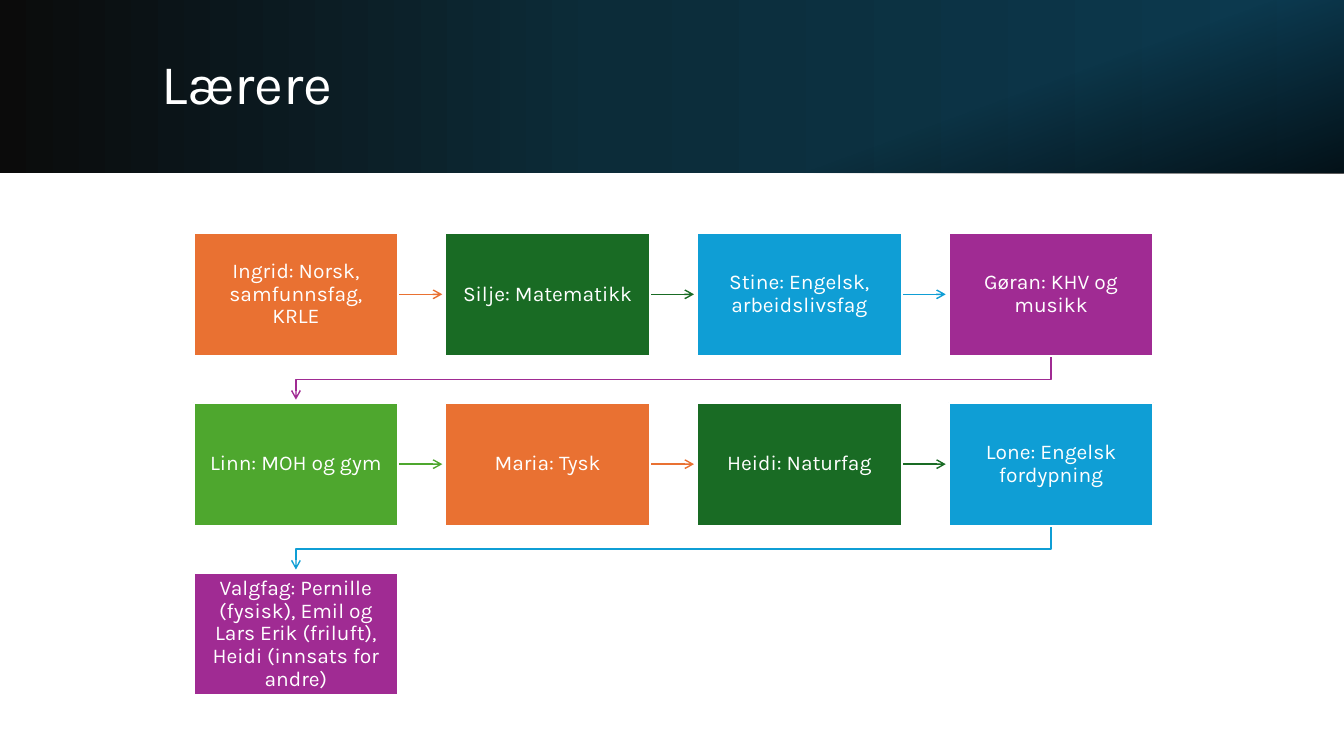
from lxml.etree import SubElement
from pptx import Presentation
from pptx.dml.color import RGBColor
from pptx.enum.shapes import MSO_CONNECTOR, MSO_SHAPE
from pptx.enum.text import MSO_ANCHOR, PP_ALIGN
from pptx.oxml import parse_xml
from pptx.oxml.ns import nsdecls, qn
from pptx.util import Inches, Pt

TITLE = "Lærere"
TEACHERS = [
    "Ingrid: Norsk, samfunnsfag, KRLE",
    "Silje: Matematikk",
    "Stine: Engelsk, arbeidslivsfag",
    "Gøran: KHV og musikk",
    "Linn: MOH og gym",
    "Maria: Tysk",
    "Heidi: Naturfag",
    "Lone: Engelsk fordypning",
    "Valgfag: Pernille (fysisk), Emil og Lars Erik (friluft), Heidi (innsats for andre)",
]
ORANGE = RGBColor(0xE9, 0x71, 0x32)
DARK_GREEN = RGBColor(0x19, 0x6B, 0x24)
BLUE = RGBColor(0x0F, 0x9E, 0xD5)
PURPLE = RGBColor(0xA0, 0x2B, 0x93)
GREEN = RGBColor(0x4E, 0xA7, 0x2E)
WHITE = RGBColor(0xFF, 0xFF, 0xFF)
BLACK = RGBColor(0, 0, 0)
NIGHT = RGBColor(0x0B, 0x0B, 0x0B)
DEEP_TEAL = RGBColor(0x0C, 0x2C, 0x39)
TEAL = RGBColor(0x0C, 0x3A, 0x50)
CYCLE = [ORANGE, DARK_GREEN, BLUE, PURPLE, GREEN]

HEADER_LAYERS = [
    (0, [(0, NIGHT, 100), (45, DEEP_TEAL, 100), (100, TEAL, 100)]),
    (70, [(0, BLACK, 0), (70, BLACK, 0), (100, BLACK, 70)]),
]
FONT = "Karla"
WIDTH, HEIGHT, HEADER = 13.33, 7.5, 1.72
LEFT, TOP, RIGHT, BOTTOM = 1.92, 2.31, 11.44, 6.9
BOX_W, BOX_H = 2.03, 1.22
COLS, ROWS = 4, 3
STEP_X = (RIGHT - LEFT - BOX_W) / (COLS - 1)
STEP_Y = (BOTTOM - TOP - BOX_H) / (ROWS - 1)
GAP = 0.03


def add_header_layer(s, angle, stops):
    sp = s.shapes.add_shape(MSO_SHAPE.RECTANGLE, 0, 0, Inches(WIDTH), Inches(HEADER))
    sp.shadow.inherit = False
    sp.line.fill.background()
    marks = "".join(
        f'<a:gs pos="{pos * 1000}"><a:srgbClr val="{color}">'
        f'<a:alpha val="{alpha * 1000}"/></a:srgbClr></a:gs>'
        for pos, color, alpha in stops
    )
    grad = parse_xml(
        f'<a:gradFill {nsdecls("a")}><a:gsLst>{marks}</a:gsLst>'
        f'<a:lin ang="{angle * 60000}" scaled="0"/></a:gradFill>'
    )
    sp._element.spPr.find(qn("a:prstGeom")).addnext(grad)


def write(sp, text, size, align):
    tf = sp.text_frame
    tf.word_wrap = True
    tf.vertical_anchor = MSO_ANCHOR.MIDDLE
    p = tf.paragraphs[0]
    p.text = text
    p.alignment = align
    p.line_spacing = 0.9
    p.font.name, p.font.size, p.font.color.rgb = FONT, Pt(size), WHITE
    return tf


def add_arrow(s, points, color):
    points = [(Inches(x), Inches(y)) for x, y in points]
    if len(points) == 2:
        sp = s.shapes.add_connector(MSO_CONNECTOR.STRAIGHT, *points[0], *points[1])
        SubElement(sp._element.spPr, qn("a:effectLst"))
    else:
        builder = s.shapes.build_freeform(*points[0])
        builder.add_line_segments(points[1:], close=False)
        sp = builder.convert_to_shape()
        sp.fill.background()
        sp.shadow.inherit = False
    sp.line.color.rgb = color
    sp.line.width = Pt(1)
    SubElement(sp.line._get_or_add_ln(), qn("a:tailEnd"), type="arrow")


def add_box(s, x, y, text, color):
    sp = s.shapes.add_shape(
        MSO_SHAPE.RECTANGLE, Inches(x), Inches(y), Inches(BOX_W), Inches(BOX_H)
    )
    sp.shadow.inherit = False
    sp.fill.solid()
    sp.fill.fore_color.rgb = color
    sp.line.color.rgb = WHITE
    sp.line.width = Pt(1.5)
    tf = write(sp, text, 15, PP_ALIGN.CENTER)
    tf.margin_left = tf.margin_right = tf.margin_top = tf.margin_bottom = Inches(0.1)


def arrow_points(x, y, last_in_row):
    if not last_in_row:
        middle = y + BOX_H / 2
        return [(x + BOX_W, middle), (x + STEP_X - GAP, middle)]
    start, end = x + BOX_W / 2, LEFT + BOX_W / 2
    turn = y + (BOX_H + STEP_Y) / 2
    return [(start, y + BOX_H), (start, turn), (end, turn), (end, y + STEP_Y - GAP)]


def main():
    prs = Presentation()
    prs.slide_width, prs.slide_height = Inches(WIDTH), Inches(HEIGHT)
    s = prs.slides.add_slide(prs.slide_layouts[6])
    for angle, stops in HEADER_LAYERS:
        add_header_layer(s, angle, stops)
    title = s.shapes.add_textbox(Inches(1.5), Inches(0.38), Inches(10.98), Inches(0.96))
    write(title, TITLE, 40, PP_ALIGN.LEFT)

    for i, text in enumerate(TEACHERS):
        row, col = divmod(i, COLS)
        x, y = LEFT + col * STEP_X, TOP + row * STEP_Y
        color = CYCLE[i % len(CYCLE)]
        if i < len(TEACHERS) - 1:
            add_arrow(s, arrow_points(x, y, col == COLS - 1), color)
        add_box(s, x, y, text, color)
    prs.save("out.pptx")


if __name__ == "__main__":
    main()
